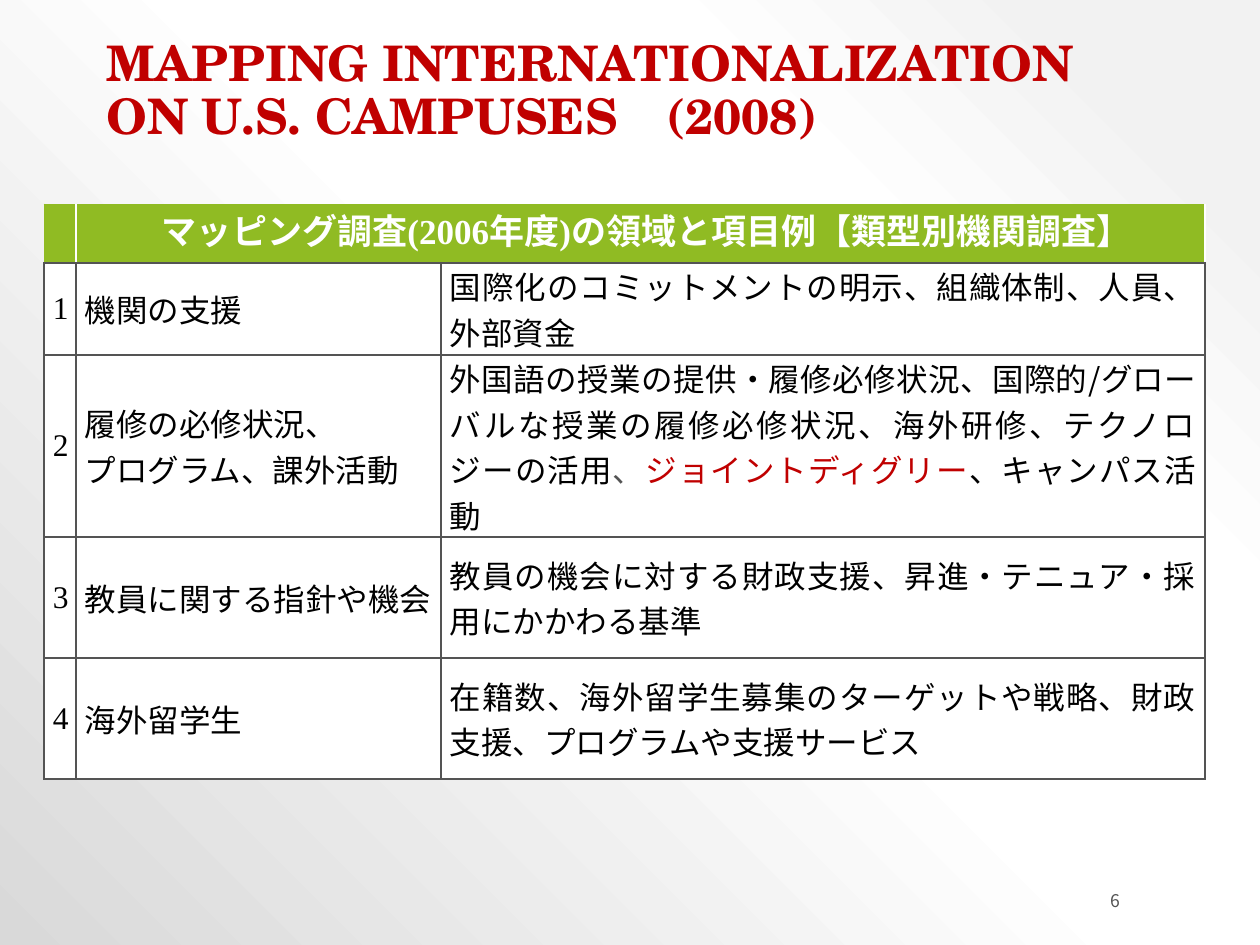
from lxml.etree import SubElement
from pptx import Presentation
from pptx.dml.color import RGBColor
from pptx.enum.text import MSO_ANCHOR, PP_ALIGN
from pptx.oxml import parse_xml
from pptx.oxml.ns import nsdecls, qn
from pptx.util import Emu, Pt

COLORS = {"red": "C00000", "green": "90BB23", "gray": "545454",
          "black": "000000", "white": "FFFFFF",
          "pale": "F2F2F2", "shade": "D9D9D9"}
SANS, SERIF, TITLE = "Noto Sans CJK JP", "Times New Roman", "TeX Gyre Schola"

HEAD = [("マッピング調査", {}),
        ("(2006年度)の領域と項目例", {"font": SERIF}),
        ("【類型別機関調査】", {})]
ROWS = [
    ("機関の支援",
     "国際化のコミットメントの明示、組織体制、人員、外部資金"),
    ("履修の必修状況、\nプログラム、課外活動",
     [("外国語の授業の提供・履修必修状況、国際的/グローバルな授業の"
       "履修必修状況、海外研修、テクノロジーの活用", {}),
      ("、", {"color": "gray"}),
      ("ジョイントディグリー", {"color": "red"}),
      ("、キャンパス活動", {})]),
    ("教員に関する指針や機会",
     "教員の機会に対する財政支援、昇進・テニュア・採用にかかわる基準"),
    ("海外留学生",
     "在籍数、海外留学生募集のターゲットや戦略、財政支援、プログラムや支援サービス"),
]


def px(n):
    return Emu(round(n * 914400 / 126))


def rgb(name):
    return RGBColor.from_string(COLORS[name])


def write(frame, text, align=PP_ALIGN.LEFT, before=0, line=None, indent=0, **base):
    """Fill one paragraph from a string or a list of (text, format) runs."""
    para = frame.paragraphs[0]
    para.alignment = align
    para.space_before = Pt(before)
    if line:
        para.line_spacing = line
    if indent:
        para._p.get_or_add_pPr().set("marL", str(px(indent)))
    parts = [(text, {})] if isinstance(text, str) else text
    for words, extra in parts:
        look = {"font": SANS, "size": 18, "color": "black", "bold": False,
                **base, **extra}
        for i, piece in enumerate(words.split("\n")):
            if i:
                para.add_line_break()
            run = para.add_run()
            run.text = piece
            run.font.name = look["font"]
            run.font.size = Pt(look["size"])
            run.font.bold = look["bold"]
            run.font.color.rgb = rgb(look["color"])
            east = SubElement(run._r.get_or_add_rPr(), qn("a:ea"))
            east.set("typeface", SANS)


def label(slide, box, text, anchor, **look):
    frame = slide.shapes.add_textbox(*map(px, box)).text_frame
    frame.word_wrap = True
    frame.vertical_anchor = anchor
    write(frame, text, **look)


def style(cell, fill, edges):
    """Set the fill, margins and edges; edges maps L, R, T, B to (colour, points)."""
    props = cell._tc.get_or_add_tcPr()
    for side in "LRTB":
        if side in edges:
            color, width = edges[side]
            props.append(parse_xml(
                f'<a:ln{side} {nsdecls("a")} w="{Pt(width)}"><a:solidFill>'
                f'<a:srgbClr val="{COLORS[color]}"/></a:solidFill></a:ln{side}>'))
    cell.fill.solid()
    cell.fill.fore_color.rgb = rgb(fill)
    cell.margin_left = cell.margin_right = px(9)
    cell.margin_top = cell.margin_bottom = 0


def survey(slide, left, top, widths, heights):
    shape = slide.shapes.add_table(len(heights), len(widths), px(left), px(top),
                                   px(sum(widths)), px(sum(heights)))
    table = shape.table
    table.first_row = table.horz_banding = False
    for col, width in zip(table.columns, widths):
        col.width = px(width)
    for row, height in zip(table.rows, heights):
        row.height = px(height)

    thin, rule = ("green", 0.5), ("gray", 1)
    for i, sides in enumerate(("LT", "T", "TR")):
        style(table.cell(0, i), "green", {**dict.fromkeys(sides, thin), "B": rule})
    table.cell(0, 1).merge(table.cell(0, 2))
    write(table.cell(0, 1).text_frame, HEAD, indent=77,
          size=20, color="white", bold=True)

    for r, (field, items) in enumerate(ROWS, 1):
        for c, text in enumerate((str(r), field, items)):
            cell = table.cell(r, c)
            style(cell, "white", dict.fromkeys("LRTB", rule))
            cell.vertical_anchor = MSO_ANCHOR.MIDDLE
            align = PP_ALIGN.LEFT if "\n" in text else PP_ALIGN.JUSTIFY
            write(cell.text_frame, text, align=align, before=12,
                  font=SANS if c else SERIF)


def backdrop(slide):
    """Shade the page radially from its top right corner."""
    fill = slide.background.fill
    fill.gradient()
    grad = slide.background._cSld.find(".//" + qn("a:gradFill"))
    for child in list(grad):
        grad.remove(child)
    stops = SubElement(grad, qn("a:gsLst"))
    for pos, color in ((10, "pale"), (28, "white"), (48, "white"), (100, "shade")):
        stop = SubElement(stops, qn("a:gs"), pos=str(pos * 1000))
        SubElement(stop, qn("a:srgbClr"), val=COLORS[color])
    shade = SubElement(grad, qn("a:path"), {"path": "circle"})
    SubElement(shade, qn("a:fillToRect"), l="100000", b="100000")


def main():
    deck = Presentation()
    deck.slide_width, deck.slide_height = px(1260), px(945)
    slide = deck.slides.add_slide(deck.slide_layouts[6])
    backdrop(slide)
    label(slide, (94, 26, 1050, 125),
          "MAPPING INTERNATIONALIZATION ON U.S. CAMPUSES\u3000(2008)".replace("\u3000", "　"),
          MSO_ANCHOR.BOTTOM, line=0.9, font=TITLE, size=28, color="red", bold=True)
    survey(slide, 44, 204, (32, 365, 764), (59, 92, 182, 121, 121))
    label(slide, (1015, 888, 118, 25), "6", MSO_ANCHOR.MIDDLE,
          align=PP_ALIGN.RIGHT, size=10, color="gray")
    deck.save("out.pptx")


if __name__ == "__main__":
    main()
